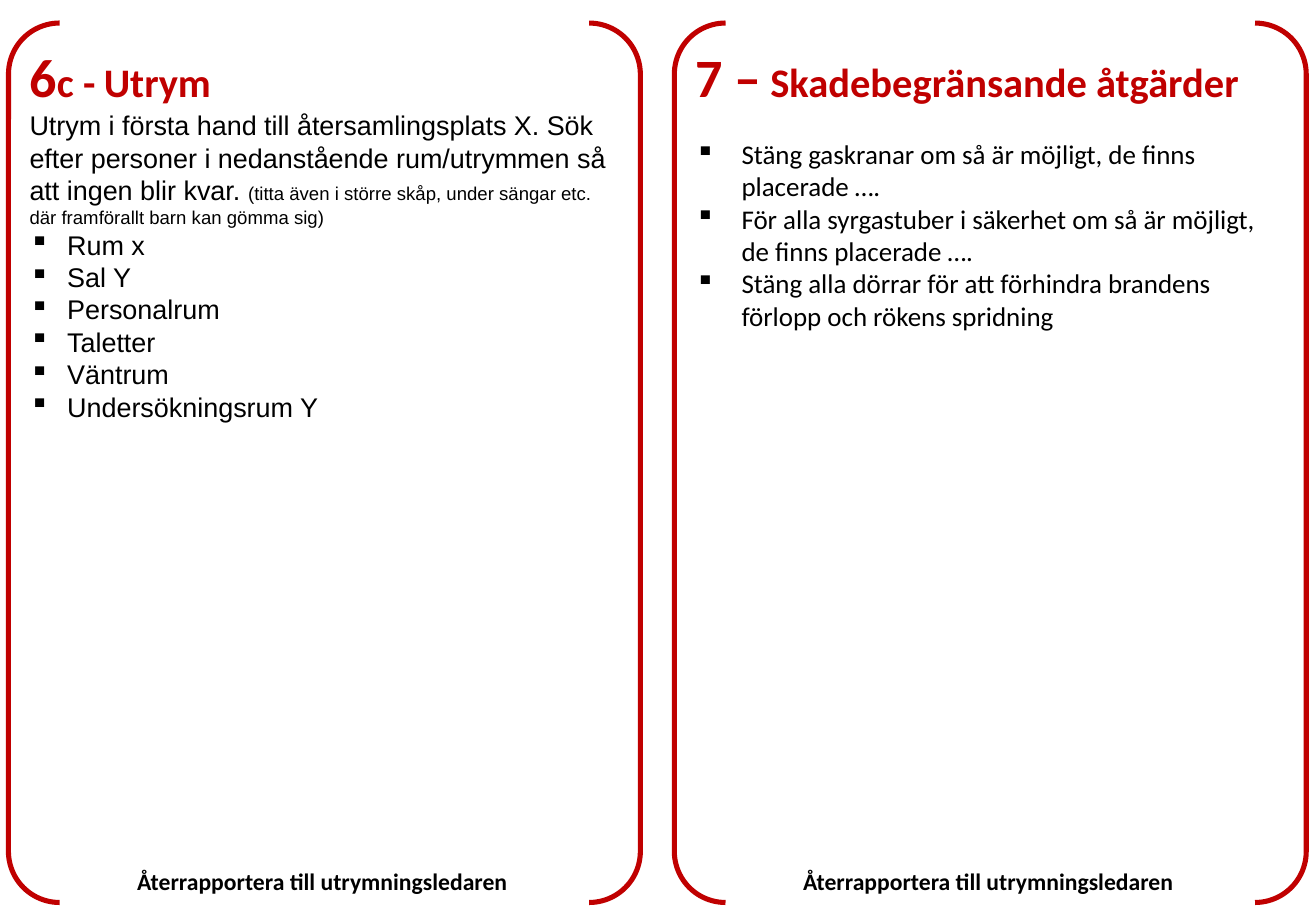
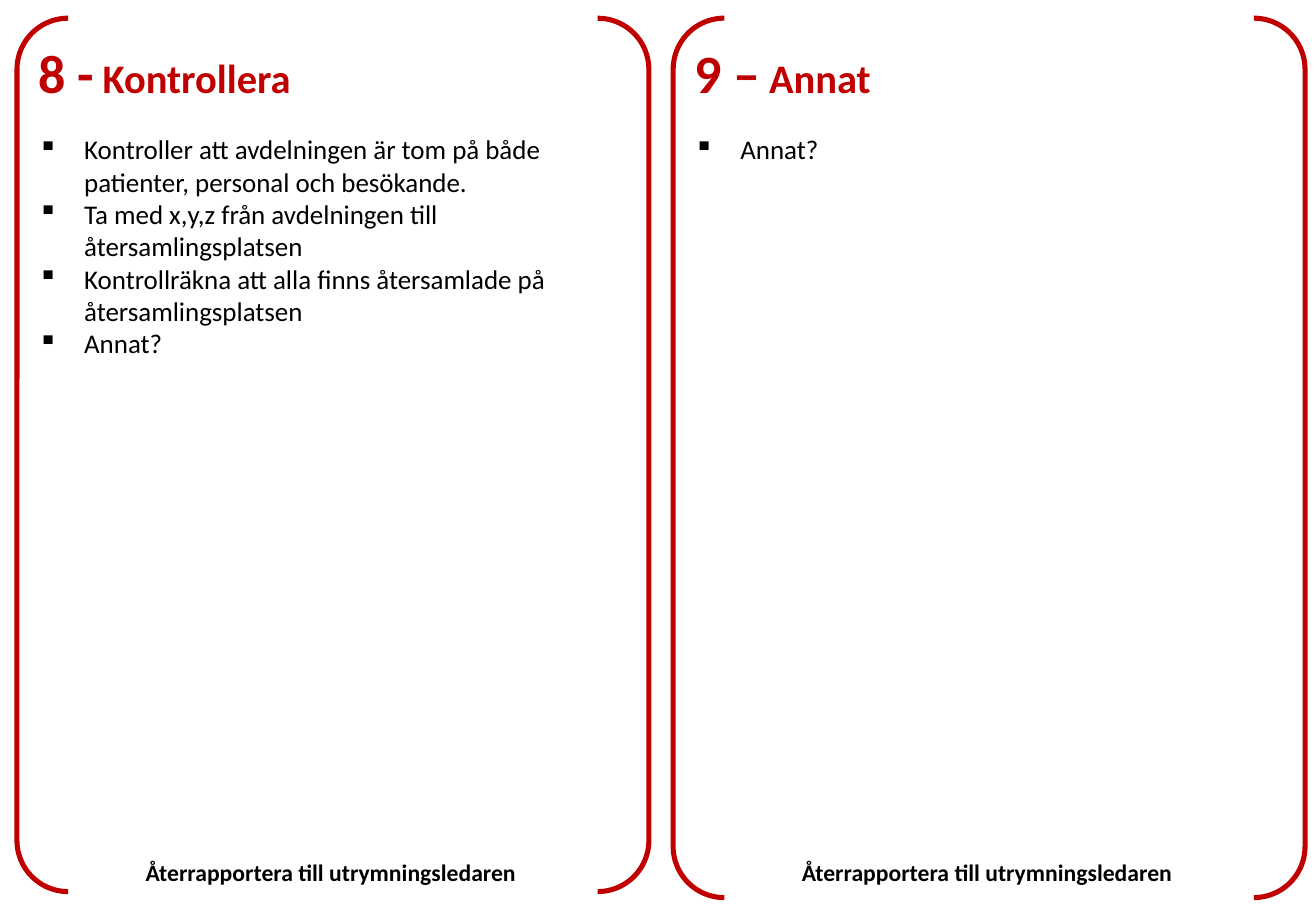
from dataclasses import dataclass

from pptx import Presentation
from pptx.dml.color import RGBColor
from pptx.enum.shapes import MSO_SHAPE
from pptx.enum.text import MSO_ANCHOR, MSO_AUTO_SIZE, PP_ALIGN
from pptx.oxml.ns import qn
from pptx.util import Pt
from lxml import etree

BRACKET_PAIR = MSO_SHAPE.DOUBLE_BRACKET
TOP = MSO_ANCHOR.TOP
LEFT = PP_ALIGN.LEFT
FIT_SHAPE = MSO_AUTO_SIZE.SHAPE_TO_FIT_TEXT

EMU_PER_PX = 9144
COLORS = {"red": "C00000", "black": "000000"}
HEADING_FONT = "Calibri"
BODY_FONT = "Arial"
CARD_WIDTH = 520
CARD_INSET = 5
FOOTER_OFFSET = 96
FOOTER_TEXT = "Återrapportera till utrymningsledaren"


def px(length):
    return length * EMU_PER_PX


def add_run(paragraph, text, size=16, font=HEADING_FONT, color="black", bold=False):
    run = paragraph.add_run()
    run.text = text
    run.font.size = Pt(size)
    run.font.name = font
    run.font.bold = bold
    run.font.color.rgb = RGBColor.from_string(COLORS[color])


@dataclass
class Card:
    left: int
    top: int
    height: int
    number: str
    suffix: str
    title: str
    bullets: list
    intro: tuple = ()
    font: str = HEADING_FONT
    indent: int = 38
    title_gap: int = 17


class CardDeck:
    def __init__(self):
        self.presentation = Presentation()
        self.presentation.slide_width = px(1083)
        self.presentation.slide_height = px(750)
        self.slide = None

    def add_slide(self, cards, footer_top):
        layout = self.presentation.slide_layouts[6]
        self.slide = self.presentation.slides.add_slide(layout)
        for card in cards:
            self.add_card(card)
        for card in cards:
            self.add_footer(card.left + FOOTER_OFFSET, footer_top)

    def add_card(self, card):
        shape = self.slide.shapes.add_shape(
            BRACKET_PAIR, px(card.left), px(card.top), px(CARD_WIDTH), px(card.height))
        shape.adjustments[0] = 0.081
        shape.shadow.inherit = False
        shape.fill.background()
        shape.line.color.rgb = RGBColor.from_string(COLORS["red"])
        shape.line.width = Pt(3)
        frame = shape.text_frame
        frame.word_wrap = True
        frame.vertical_anchor = TOP
        frame.margin_left = frame.margin_right = px(CARD_INSET)
        frame.margin_top = frame.margin_bottom = px(CARD_INSET)
        self.add_title(frame.paragraphs[0], card)
        if card.intro:
            paragraph = frame.add_paragraph()
            paragraph.alignment = LEFT
            for text, size in card.intro:
                add_run(paragraph, text, size=size, font=card.font)
        for text in card.bullets:
            self.add_bullet(frame.add_paragraph(), text, card)

    def add_title(self, paragraph, card):
        paragraph.alignment = LEFT
        paragraph.space_after = Pt(card.title_gap)
        add_run(paragraph, card.number, size=32, color="red", bold=True)
        if card.suffix:
            add_run(paragraph, card.suffix, size=24, color="red", bold=True)
        add_run(paragraph, " ", size=22, bold=True)
        add_run(paragraph, card.title, size=24, color="red", bold=True)

    def add_bullet(self, paragraph, text, card):
        paragraph.alignment = LEFT
        properties = paragraph._p.get_or_add_pPr()
        properties.set("marL", str(px(card.indent)))
        properties.set("indent", str(-px(card.indent)))
        etree.SubElement(properties, qn("a:buChar")).set("char", "▪")
        add_run(paragraph, text, font=card.font)

    def add_footer(self, left, top):
        shape = self.slide.shapes.add_textbox(px(left), px(top), px(328), px(34))
        frame = shape.text_frame
        frame.word_wrap = False
        frame.auto_size = FIT_SHAPE
        add_run(frame.paragraphs[0], FOOTER_TEXT, size=14, bold=True)


def main():
    deck = CardDeck()
    deck.add_slide([
        Card(7, 19, 724, "6", "c -", "Utrym",
             ["Rum x", "Sal Y", "Personalrum", "Taletter", "Väntrum", "Undersökningsrum Y"],
             intro=(
                 ("Utrym i första hand till återsamlingsplats X. Sök efter personer i "
                  "nedanstående rum/utrymmen så att ingen blir kvar. ", 16),
                 ("(titta även i större skåp, under sängar etc. "
                  "där framförallt barn kan gömma sig)", 11)),
             font=BODY_FONT, indent=31, title_gap=0),
        Card(555, 19, 724, "7 –", "", "Skadebegränsande åtgärder",
             ["Stäng gaskranar om så är möjligt, de finns placerade ….",
              "För alla syrgastuber i säkerhet om så är möjligt, de finns placerade ….",
              "Stäng alla dörrar för att förhindra brandens förlopp och rökens spridning"]),
    ], footer_top=709)
    deck.add_slide([
        Card(14, 15, 719, "8 -", "", "Kontrollera",
             ["Kontroller att avdelningen är tom på både patienter, personal och besökande.",
              "Ta med x,y,z från avdelningen till återsamlingsplatsen",
              "Kontrollräkna att alla finns återsamlade på återsamlingsplatsen",
              "Annat?"]),
        Card(554, 15, 724, "9 –", "", "Annat", ["Annat?"]),
    ], footer_top=701)
    deck.presentation.save("out.pptx")


if __name__ == "__main__":
    main()
